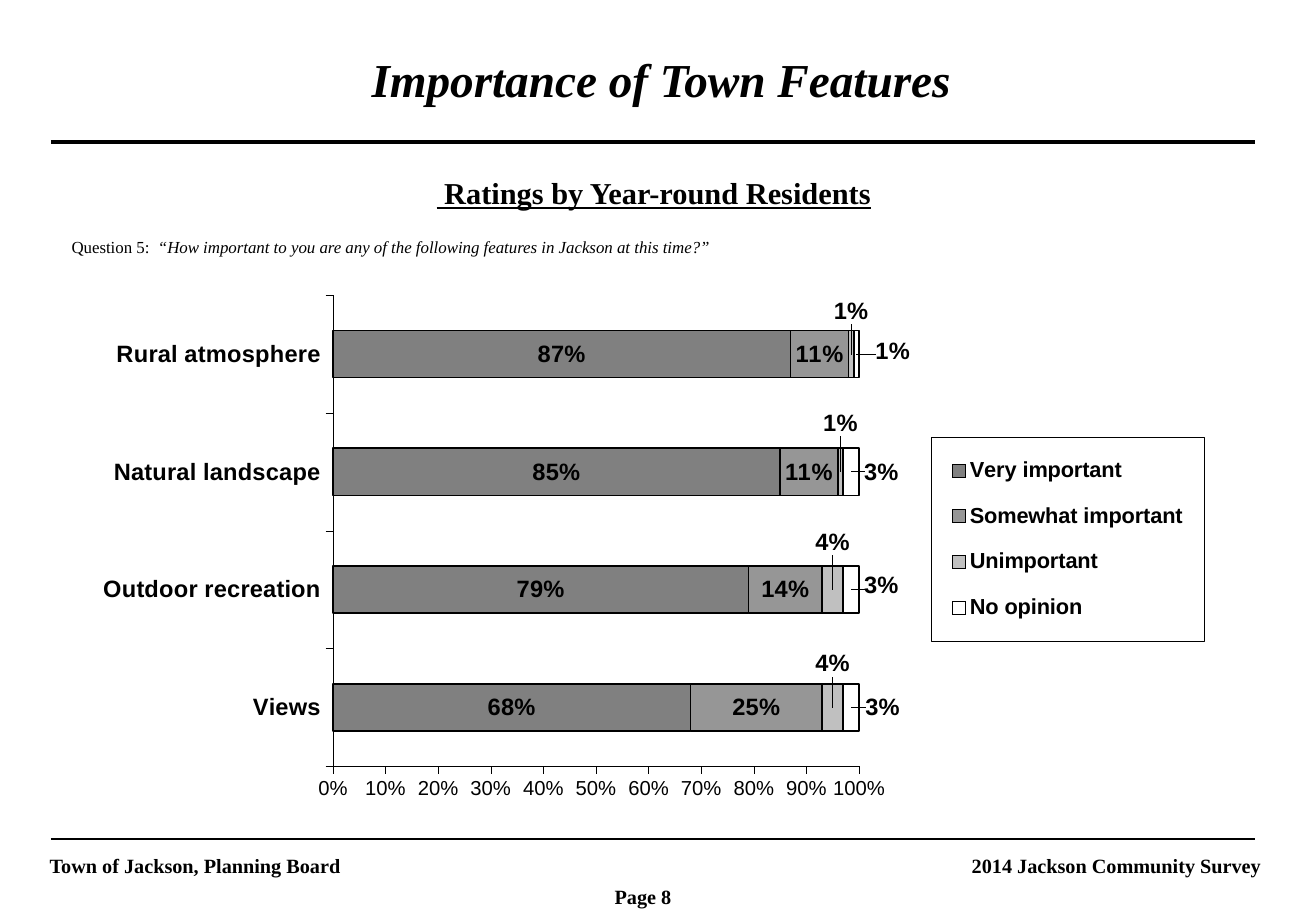
from dataclasses import dataclass

from lxml import etree
from pptx import Presentation, util as u
from pptx.chart import data
from pptx.dml.color import RGBColor
from pptx.enum import chart as ch, shapes, text
from pptx.oxml import ns, parse_xml

PX = 9144  # 100 px to the inch
COLORS = {"ink": "000000", "very": "808080", "somewhat": "969696",
          "unimportant": "C0C0C0", "none": "FFFFFF"}
SERIF, SANS = "Times New Roman", "Arial"
CHART_LEFT, CHART_TOP, CHART_W, CHART_H = 83, 224, 915, 451


@dataclass
class Caption:
    words: str
    left: int
    top: int
    width: int
    height: int
    size: int = 12
    align: text.PP_ALIGN = text.PP_ALIGN.LEFT
    bold: bool = True
    italic: bool = False
    underline: bool = False
    quote: str = ""


@dataclass
class Rule:
    top: int
    weight: int


@dataclass
class Rating:
    name: str
    color: str
    values: tuple[float, ...]
    label_shifts: tuple[tuple[int, int], ...] = ()


TITLE = Caption("Importance of Town Features", 48, 42, 992, 52, 28,
                text.PP_ALIGN.CENTER, italic=True)
CAPTIONS = [
    Caption(" Ratings by Year-round Residents", 42, 142, 992, 37, 18,
            text.PP_ALIGN.CENTER, underline=True),
    Caption("Question 5:  ", 49, 192, 908, 25, 10, bold=False,
            quote="“How important to you are any of the following features in Jackson at this time?”"),
    Caption("Town of Jackson, Planning Board", 31, 700, 392, 28),
    Caption("2014 Jackson Community Survey", 681, 700, 367, 28,
            align=text.PP_ALIGN.RIGHT),
    Caption("Page 8", 496, 725, 92, 28),
]
RULES = [Rule(117, 2), Rule(691, 1)]
FEATURES = ["Views", "Outdoor recreation", "Natural landscape", "Rural atmosphere"]
RATINGS = [
    Rating("Very important", "very", (0.68, 0.79, 0.85, 0.87)),
    Rating("Somewhat important", "somewhat", (0.25, 0.14, 0.11, 0.11)),
    Rating("Unimportant", "unimportant", (0.04, 0.04, 0.01, 0.01),
           ((0, -36), (0, -39), (0, -40), (0, -35))),
    Rating("No opinion", "none", (0.03, 0.03, 0.03, 0.01),
           ((26, 0), (25, -4), (25, 0), (30, -2))),
]


def rgb(name: str) -> RGBColor:
    return RGBColor.from_string(COLORS[name])


def set_font(font, size: float, face: str, bold: bool) -> None:
    font.size, font.name, font.bold = u.Pt(size), face, bold
    font.color.rgb = rgb("ink")


def set_line(line, weight: float) -> None:
    line.color.rgb = rgb("ink")
    line.width = u.Pt(weight)


def write_caption(box, caption: Caption) -> None:
    box.left, box.top = caption.left * PX, caption.top * PX
    box.width, box.height = caption.width * PX, caption.height * PX
    frame = box.text_frame
    frame.word_wrap = True
    frame.auto_size = text.MSO_AUTO_SIZE.NONE
    frame.vertical_anchor = text.MSO_ANCHOR.TOP
    para = frame.paragraphs[0]
    para.text = caption.words
    para.alignment, para.line_spacing = caption.align, 0.9
    if caption.quote:
        para.add_run().text = caption.quote
    for span in para.runs:
        set_font(span.font, caption.size, SERIF, caption.bold)
        span.font.italic = caption.italic or span.text == caption.quote
        span.font.underline = caption.underline


def add_rule(page, rule: Rule) -> None:
    line = page.shapes.add_connector(shapes.MSO_CONNECTOR.STRAIGHT,
                                     42 * PX, rule.top * PX, 1033 * PX, rule.top * PX)
    set_line(line.line, rule.weight)
    etree.SubElement(line._element.spPr, ns.qn("a:effectLst"))


def place(parent, index: int, x: int, y: int, size=None, inner: bool = False) -> None:
    """Insert a manual layout in px of the chart; without a size, x and y are shifts."""
    for old in parent.findall(ns.qn("c:layout")):
        parent.remove(old)
    items = [("layoutTarget", "inner")] if inner else []
    if size:
        items += [("xMode", "edge"), ("yMode", "edge")]
    items += [("x", x / CHART_W), ("y", y / CHART_H)]
    if size:
        items += [("w", size[0] / CHART_W), ("h", size[1] / CHART_H)]
    layout = etree.Element(ns.qn("c:layout"))
    manual = etree.SubElement(layout, ns.qn("c:manualLayout"))
    for tag, value in items:
        etree.SubElement(manual, ns.qn(f"c:{tag}")).set("val", str(value))
    parent.insert(index, layout)


def style_axis(axis, size: int, bold: bool) -> None:
    axis.has_major_gridlines = False
    axis.major_tick_mark = ch.XL_TICK_MARK.OUTSIDE
    axis.minor_tick_mark = ch.XL_TICK_MARK.NONE
    set_font(axis.tick_labels.font, size, SANS, bold)
    set_line(axis.format.line, 0.25)


def style_series(series, rating: Rating) -> None:
    series.format.fill.solid()
    series.format.fill.fore_color.rgb = rgb(rating.color)
    set_line(series.format.line, 1)
    labels = series.data_labels
    labels.show_value = True
    labels.number_format, labels.number_format_is_linked = "0%", False
    set_font(labels.font, 14, SANS, True)
    for index in range(len(rating.label_shifts)):
        set_font(series.points[index].data_label.font, 14, SANS, True)
    found = series._element.iter(ns.qn("c:dLbl"))
    for label, (dx, dy) in zip(list(found), rating.label_shifts):
        place(label, 1, dx, dy)


def style_legend(chart) -> None:
    chart.has_legend = True
    legend = chart.legend
    legend.position = ch.XL_LEGEND_POSITION.RIGHT
    legend.include_in_layout = False
    set_font(legend.font, 12.9, SANS, True)
    element = legend._element
    place(element, 1, 683, 136, (225, 168))
    border = parse_xml(
        f'<c:spPr {ns.nsdecls("c", "a")}><a:noFill/><a:ln w="3175"><a:solidFill>'
        f'<a:srgbClr val="{COLORS["ink"]}"/></a:solidFill></a:ln></c:spPr>')
    element.find(ns.qn("c:overlay")).addnext(border)


def add_ratings_chart(page) -> None:
    table = data.CategoryChartData(number_format="0%")
    table.categories = FEATURES
    for rating in RATINGS:
        table.add_series(rating.name, rating.values)
    chart = page.shapes.add_chart(
        ch.XL_CHART_TYPE.BAR_STACKED_100, CHART_LEFT * PX, CHART_TOP * PX,
        CHART_W * PX, CHART_H * PX, table).chart
    chart.has_title = False
    set_font(chart.font, 18, SANS, True)
    plot = chart.plots[0]
    plot.gap_width, plot.overlap, plot.vary_by_categories = 150, 100, False
    for series, rating in zip(plot.series, RATINGS):
        style_series(series, rating)
    style_axis(chart.category_axis, 14, True)
    scale = chart.value_axis
    style_axis(scale, 12, False)
    scale.minimum_scale, scale.maximum_scale, scale.major_unit = 0, 1, 0.1
    scale.tick_labels.number_format = "0%"
    scale.tick_labels.number_format_is_linked = False
    style_legend(chart)
    area = next(chart._chartSpace.iter(ns.qn("c:plotArea")))
    place(area, 0, 191, 19, (433, 388), inner=True)


def main() -> None:
    deck = Presentation()
    deck.slide_width, deck.slide_height = 1083 * PX, 750 * PX
    page = deck.slides.add_slide(deck.slide_layouts[5])
    write_caption(page.shapes.title, TITLE)
    for rule in RULES:
        add_rule(page, rule)
    for caption in CAPTIONS:
        write_caption(page.shapes.add_textbox(0, 0, PX, PX), caption)
    add_ratings_chart(page)
    deck.save("out.pptx")


if __name__ == "__main__":
    main()
